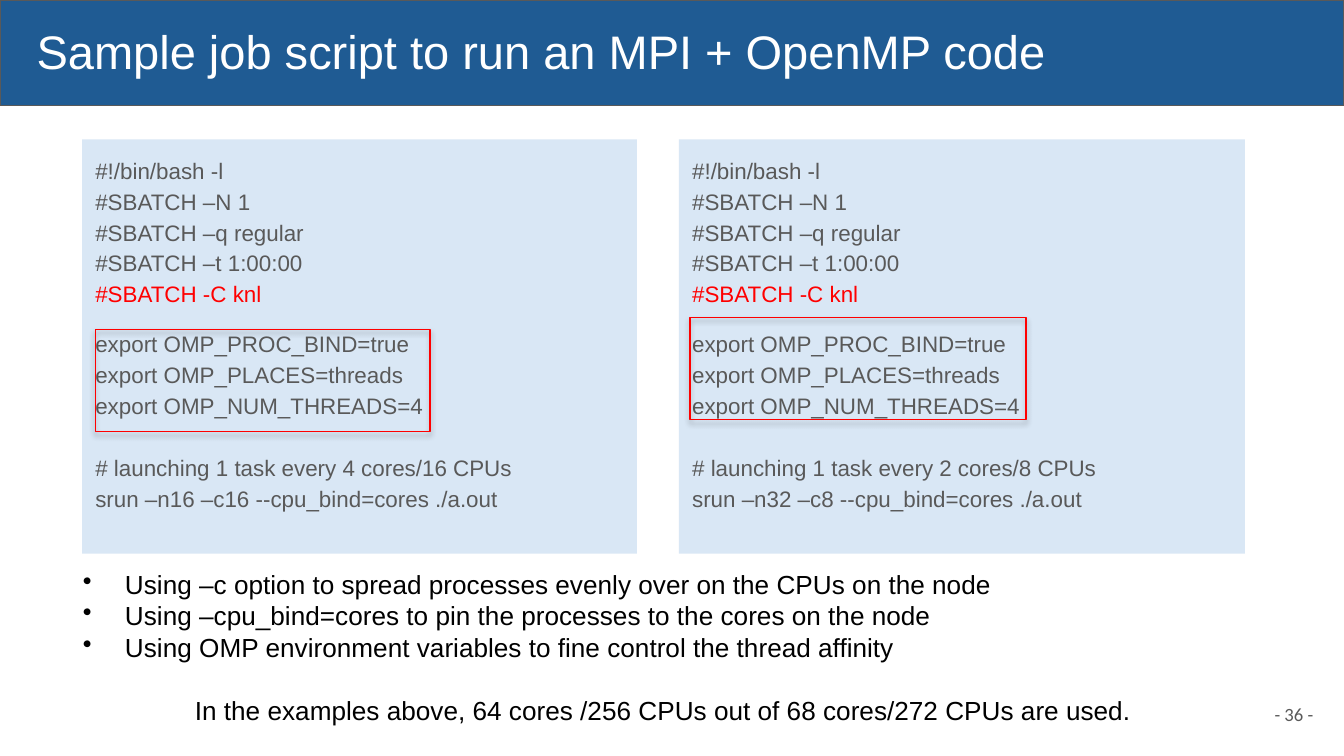
from dataclasses import dataclass

from lxml.etree import SubElement
from pptx import Presentation
from pptx.dml.color import RGBColor
from pptx.enum.shapes import MSO_SHAPE as Shape
from pptx.enum.text import MSO_ANCHOR as Anchor, PP_ALIGN as Align
from pptx.oxml.ns import qn
from pptx.util import Pt


@dataclass(frozen=True)
class Theme:
    banner: RGBColor = RGBColor(0x1F, 0x5B, 0x93)
    panel: RGBColor = RGBColor(0xD9, 0xE7, 0xF5)
    gray: RGBColor = RGBColor(0x59, 0x59, 0x59)
    red: RGBColor = RGBColor(0xFF, 0, 0)
    black: RGBColor = RGBColor(0, 0, 0)
    white: RGBColor = RGBColor(0xFF, 0xFF, 0xFF)
    font: str = "Arial"
    number_font: str = "Calibri"
    title_size: float = 25.2
    code_size: float = 12
    note_size: float = 14
    number_size: float = 10


@dataclass(frozen=True)
class Box:
    left: float
    top: float
    width: float
    height: float

    def lengths(self) -> tuple:
        return Pt(self.left), Pt(self.top), Pt(self.width), Pt(self.height)


@dataclass(frozen=True)
class Line:
    text: str
    color: RGBColor
    before: float = 0
    bullet: bool = False
    align: Align = Align.LEFT


@dataclass(frozen=True)
class Job:
    panel: Box
    highlight: Box
    tasks: int
    cpus: int  # logical CPUs per task, four to a core


THEME = Theme()
INSET = 7.2
INDENT = 22.5


def add_rect(page, box: Box, fill=None, line=None):
    rect = page.shapes.add_shape(Shape.RECTANGLE, *box.lengths())
    rect.shadow.inherit = False
    if fill is None:
        rect.fill.background()
    else:
        rect.fill.solid()
        rect.fill.fore_color.rgb = fill
    if line is None:
        rect.line.fill.background()
    else:
        rect.line.color.rgb = line
        rect.line.width = Pt(0.75)
    return rect


def write(shape, lines: list[Line], size: float, font: str = THEME.font,
          spacing: float = 1.0, inset_y: float = INSET, anchor=Anchor.TOP) -> None:
    frame = shape.text_frame
    frame.word_wrap = True
    frame.vertical_anchor = anchor
    frame.margin_left = frame.margin_right = Pt(INSET)
    frame.margin_top = frame.margin_bottom = Pt(inset_y)
    for index, line in enumerate(lines):
        para = frame.add_paragraph() if index else frame.paragraphs[0]
        para.text = line.text
        para.alignment = line.align
        para.line_spacing = spacing
        para.space_before = Pt(line.before)
        para.font.name, para.font.size = font, Pt(size)
        para.font.color.rgb = line.color
        if line.bullet:
            add_bullet(para)


def add_bullet(para) -> None:
    props = para._p.get_or_add_pPr()
    props.set("marL", str(Pt(INDENT)))
    props.set("indent", str(-Pt(INDENT)))
    mark = props.makeelement(qn("a:buChar"), {"char": "•"})
    props.insert_element_before(mark, "a:tabLst", "a:defRPr", "a:extLst")


def add_drop_shadow(shape) -> None:
    effects = shape._element.spPr.find(qn("a:effectLst"))
    shadow = SubElement(effects, qn("a:outerShdw"), blurRad=str(Pt(3.1)),
                        dist=str(Pt(1.8)), dir="5400000", rotWithShape="0")
    color = SubElement(shadow, qn("a:srgbClr"), val="000000")
    SubElement(color, qn("a:alpha"), val="35000")


def draw_job(page, job: Job) -> None:
    gray = THEME.gray
    lines = [
        Line("#!/bin/bash -l", gray),
        Line("#SBATCH –N 1", gray),
        Line("#SBATCH –q regular", gray),
        Line("#SBATCH –t 1:00:00", gray),
        Line("#SBATCH -C knl", THEME.red),
        Line("export OMP_PROC_BIND=true", gray, before=10.2),
        Line("export OMP_PLACES=threads", gray),
        Line("export OMP_NUM_THREADS=4", gray),
        Line(f"# launching 1 task every {job.cpus // 4} cores/{job.cpus} CPUs",
             gray, before=16.5),
        Line(f"srun –n{job.tasks} –c{job.cpus} --cpu_bind=cores ./a.out", gray),
    ]
    write(add_rect(page, job.panel, THEME.panel), lines, THEME.code_size, spacing=1.15)
    add_drop_shadow(add_rect(page, job.highlight, line=THEME.red))


def main() -> None:
    deck = Presentation()
    deck.slide_width, deck.slide_height = Pt(720), Pt(405)
    page = deck.slides.add_slide(deck.slide_layouts[6])

    # Title banner
    add_rect(page, Box(0, 0, 720, 56.7), THEME.banner, THEME.gray)
    title = page.shapes.add_textbox(*Box(12.5, 5, 694, 45.4).lengths())
    write(title, [Line("Sample job script to run an MPI + OpenMP code", THEME.white)],
          THEME.title_size)

    # Two job scripts side by side
    jobs = [
        Job(Box(44, 74.7, 297.3, 222), Box(51.1, 176.4, 179.3, 54.7), 16, 16),
        Job(Box(363.7, 74.7, 303.3, 222), Box(369.6, 170.2, 180, 54.7), 32, 8),
    ]
    for job in jobs:
        draw_job(page, job)

    # Notes
    points = [
        "Using –c option to spread processes evenly over on the CPUs on the node",
        "Using –cpu_bind=cores to pin the processes to the cores on the node",
        "Using OMP environment variables to fine control the thread affinity",
    ]
    lines = [Line(point, THEME.black, bullet=True) for point in points]
    lines.append(Line("In the examples above, 64 cores /256 CPUs out of "
                      "68 cores/272 CPUs are used.",
                      THEME.black, before=16.8, align=Align.CENTER))
    notes = page.shapes.add_textbox(*Box(37.4, 301, 635.8, 108.7).lengths())
    write(notes, lines, THEME.note_size, inset_y=3.6)

    # Page number
    number = page.shapes.add_textbox(*Box(667.4, 367.2, 43.2, 31).lengths())
    write(number, [Line("- 36 -", THEME.gray, align=Align.RIGHT)], THEME.number_size,
          font=THEME.number_font, anchor=Anchor.MIDDLE)

    deck.save("out.pptx")


if __name__ == "__main__":
    main()
